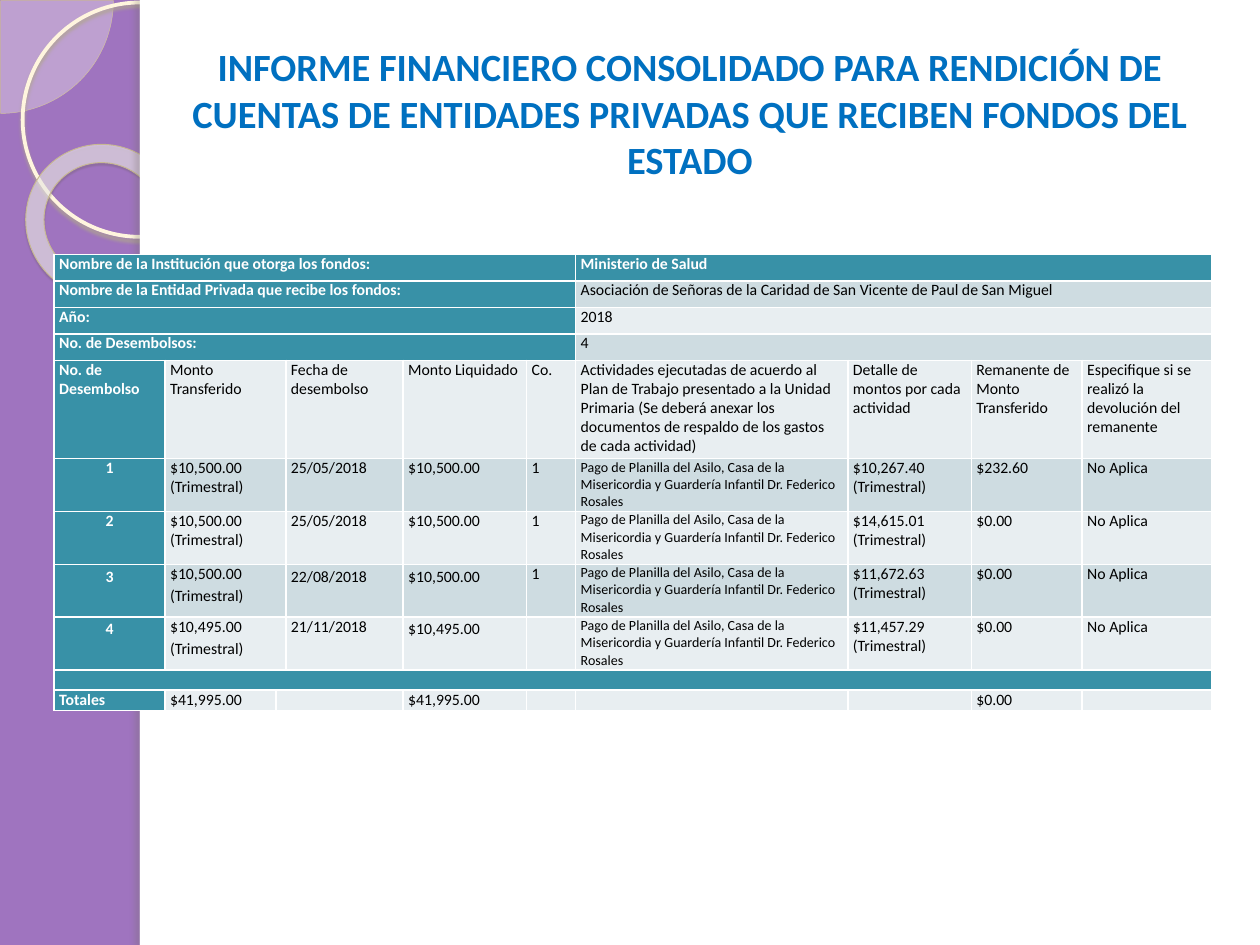
import lxml.etree
import pptx
import pptx.dml.color
import pptx.enum.shapes
import pptx.enum.text
import pptx.oxml.ns
import pptx.util

Inches = pptx.util.Inches
Pt = pptx.util.Pt
qn = pptx.oxml.ns.qn
Kind = pptx.enum.shapes.MSO_SHAPE
CENTER = pptx.enum.text.PP_ALIGN.CENTER

TEAL, DARK, LIGHT = "3891A7", "CEDCE1", "E8EEF1"
COLS = [0.88, 0.88, 0.08, 0.93, 0.98, 0.39, 2.16, 0.98, 0.88, 1.03]
ROWS = [0.21] * 4 + [0.78] + [0.42] * 4 + [0.16] * 2
HEADS = [
    ("Nombre de la Institución que otorga los fondos:", "Ministerio de Salud"),
    ("Nombre de la Entidad Privada que recibe los fondos:",
     "Asociación de Señoras de la Caridad de San Vicente de Paul de San Miguel"),
    ("Año:", "2018"),
    ("No. de Desembolsos:", "4"),
]
LABELS = [
    "No. de Desembolso", "Monto Transferido", "", "Fecha de desembolso",
    "Monto Liquidado", "Co.",
    "Actividades ejecutadas de acuerdo al Plan de Trabajo presentado a la "
    "Unidad Primaria (Se deberá anexar los documentos de respaldo de los "
    "gastos de cada actividad)",
    "Detalle de montos por cada actividad", "Remanente de Monto Transferido",
    "Especifique si se realizó la devolución del remanente",
]
TASK = ("Pago de Planilla del Asilo, Casa de la Misericordia y Guardería "
        "Infantil Dr. Federico Rosales")
GRANTS = [
    ("$10,500.00", "25/05/2018", "1", "$10,267.40 (Trimestral)", "$232.60"),
    ("$10,500.00", "25/05/2018", "1", "$14,615.01\n(Trimestral)", "$0.00"),
    ("$10,500.00", "22/08/2018", "1", "$11,672.63 (Trimestral)", "$0.00"),
    ("$10,495.00", "21/11/2018", "", "$11,457.29 (Trimestral)", "$0.00"),
]
TOTALS = ["Totales", "$41,995.00", "", "", "$41,995.00", "", "", "", "$0.00", ""]
LOOSE = {(7, 0), (7, 1), (7, 3), (7, 4), (8, 0), (8, 1), (8, 4)}


def color(code):
    return pptx.dml.color.RGBColor.from_string(code)


def add(parent, tag, **attrs):
    return lxml.etree.SubElement(
        parent, qn(tag), {key: str(val) for key, val in attrs.items()})


class Deck:
    font = "Calibri"

    def __init__(self, wide, high):
        self.file = pptx.Presentation()
        self.file.slide_width = Inches(wide)
        self.file.slide_height = Inches(high)
        self.slide = self.file.slides.add_slide(self.file.slide_layouts[6])

    def back(self, code):
        fill = self.slide.background.fill
        fill.solid()
        fill.fore_color.rgb = color(code)

    def shape(self, kind, box, fill=None, clear=100, line=None, width=1,
              shade=None, adjust=(), turn=0):
        item = self.slide.shapes.add_shape(kind, *map(Inches, box))
        item.rotation = turn
        for index, value in enumerate(adjust):
            item.adjustments[index] = value
        if fill:
            item.fill.solid()
            item.fill.fore_color.rgb = color(fill)
            if clear < 100:
                tone = item._element.spPr.find(qn("a:solidFill"))[0]
                add(tone, "a:alpha", val=clear * 1000)
        else:
            item.fill.background()
        if line:
            item.line.color.rgb = color(line)
            item.line.width = Pt(width)
        else:
            item.line.fill.background()
        item.shadow.inherit = False
        if shade:
            code, alpha, blur, gap, angle = shade
            glow = add(item._element.spPr.find(qn("a:effectLst")),
                       "a:outerShdw", blurRad=Pt(blur), dist=Pt(gap),
                       dir=angle * 60000, algn="tl", rotWithShape=0)
            add(add(glow, "a:srgbClr", val=code), "a:alpha", val=alpha * 1000)

    def style(self, para, size, code, bold, align=None):
        para.font.name = self.font
        para.font.size = Pt(size)
        para.font.bold = bold
        para.font.color.rgb = color(code)
        para.alignment = align

    def title(self, text, box, size, code):
        frame = self.slide.shapes.add_textbox(*map(Inches, box)).text_frame
        frame.word_wrap = True
        frame.vertical_anchor = pptx.enum.text.MSO_ANCHOR.MIDDLE
        frame.text = text
        self.style(frame.paragraphs[0], size, code, True, CENTER)

    def table(self, box, cols, rows):
        grid = self.slide.shapes.add_table(
            len(rows), len(cols), *map(Inches, box)).table
        grid.first_col = True
        for col, wide in zip(grid.columns, cols):
            col.width = Inches(wide)
        for row, high in zip(grid.rows, rows):
            row.height = Inches(high)
        return grid

    def cell(self, cell, text, fill, size=9, align=None, loose=False):
        cell.margin_left = cell.margin_right = Inches(0.04)
        cell.margin_top = cell.margin_bottom = 0
        cell.fill.solid()
        cell.fill.fore_color.rgb = color(fill)
        cell.text = text
        head = fill == TEAL
        paras = cell.text_frame.paragraphs
        for para in paras:
            self.style(para, size, "FFFFFF" if head else "000000", head, align)
        if loose:
            paras[-1].line_spacing = 1.15
        if not text:
            add(paras[0]._p, "a:endParaRPr", sz=size * 100)


def main():
    deck = Deck(10, 7.5)
    deck.back("9F74BF")
    deck.shape(Kind.PIE, (-0.89, -0.89, 1.79, 1.79), "FEFAF4", 33,
               "D3C39F", 0.25, adjust=(0, 54))
    deck.shape(Kind.OVAL, (0.18, 0.02, 1.86, 1.86), line="FFF5DE", width=2.15,
               shade=("B0A68F", 85, 2, 2, 90))
    deck.shape(Kind.DONUT, (0.2, 1.15, 1.23, 1.21), "FFFEFB", 55, "C7B893",
               0.58, ("5A5444", 35, 1, 1.2, 75), (0.12,), 38.6)
    deck.shape(Kind.RECTANGLE, (1.11, 0, 8.89, 7.5), "FFFFFF")
    deck.shape(Kind.RECTANGLE, (1.11, 0, 0.08, 7.5), "FFFFFF",
               shade=("736F63", 25, 3, 3, 180))
    deck.title("INFORME FINANCIERO CONSOLIDADO PARA RENDICIÓN DE CUENTAS DE "
               "ENTIDADES PRIVADAS QUE RECIBEN FONDOS DEL ESTADO",
               (1.3, 0.29, 8.35, 1.21), 22, "0070C0")

    data = [[left] + [""] * 5 + [right] + [""] * 3 for left, right in HEADS]
    data.append(LABELS)
    for rank, (paid, date, count, cost, rest) in enumerate(GRANTS, 1):
        data.append([str(rank), paid + "\n(Trimestral)", "", date, paid,
                     count, TASK, cost, rest, "No Aplica"])
    data += [[""] * 10, TOTALS]

    grid = deck.table((0.43, 2.02, 9.21, 3.59), COLS, ROWS)
    for r, row in enumerate(data):
        grant = 5 <= r <= 8
        for c, text in enumerate(row):
            head = c == 0 or r in (0, 9) or (r < 4 and c < 6)
            fill = TEAL if head else DARK if r % 2 and r < 9 else LIGHT
            deck.cell(grid.cell(r, c), text, fill,
                      8 if grant and c == 6 else 9,
                      CENTER if grant and c == 0 else None, (r, c) in LOOSE)
    spans = [(r, a, b) for r in range(4) for a, b in ((0, 5), (6, 9))]
    spans += [(r, 1, 2) for r in range(4, 9)] + [(9, 0, 9), (10, 2, 3)]
    for r, a, b in spans:
        grid.cell(r, a).merge(grid.cell(r, b))
    deck.file.save("out.pptx")


if __name__ == "__main__":
    main()
